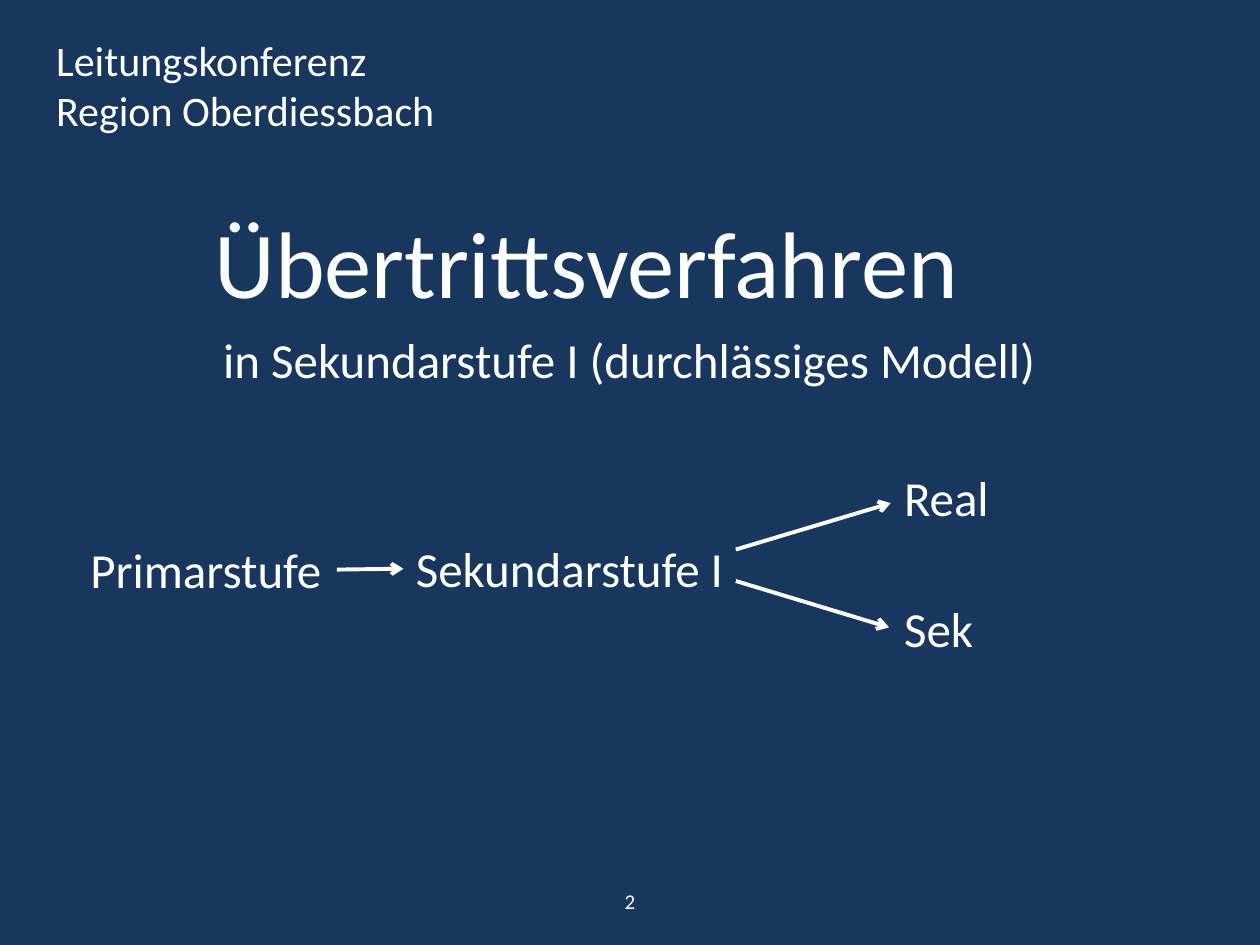
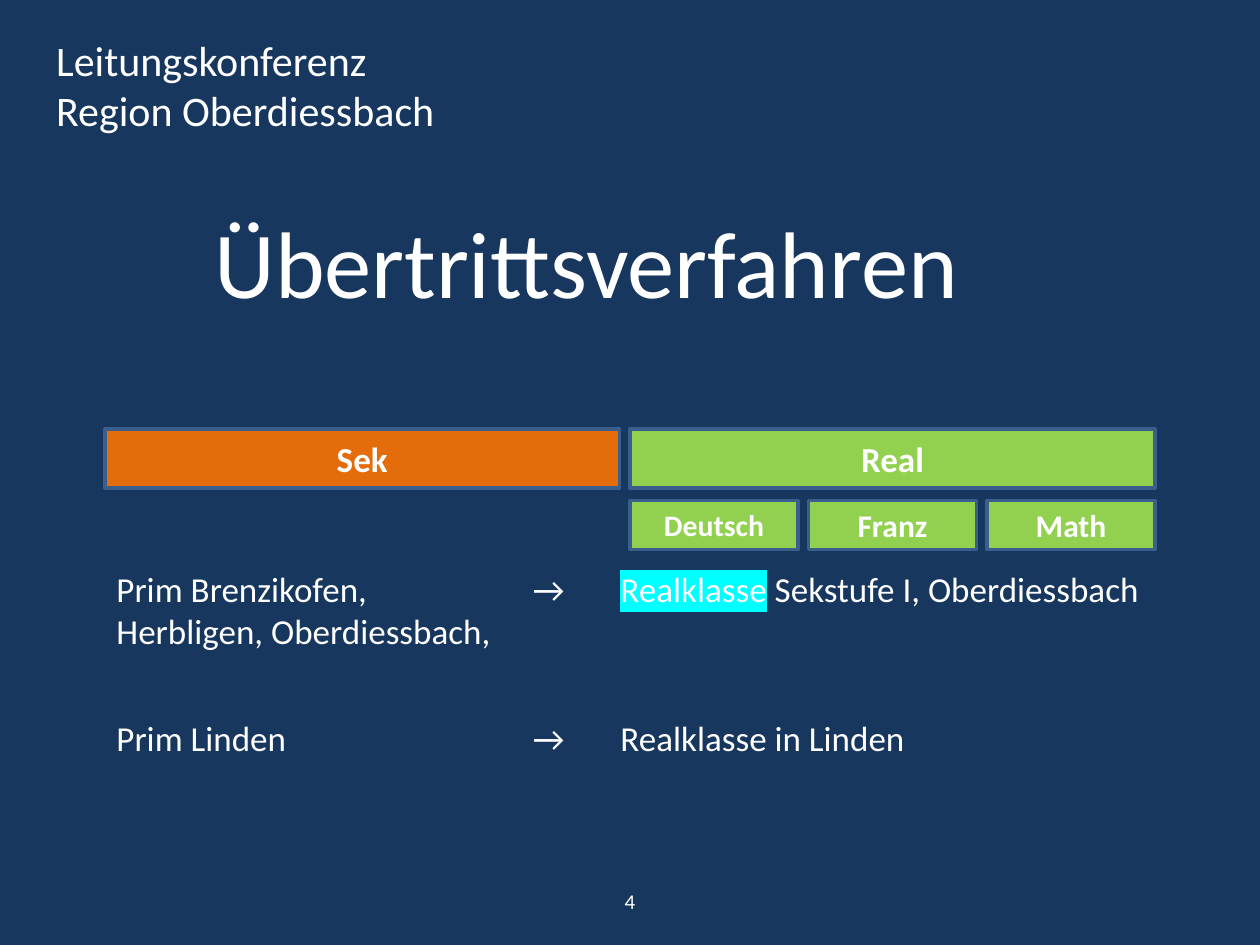
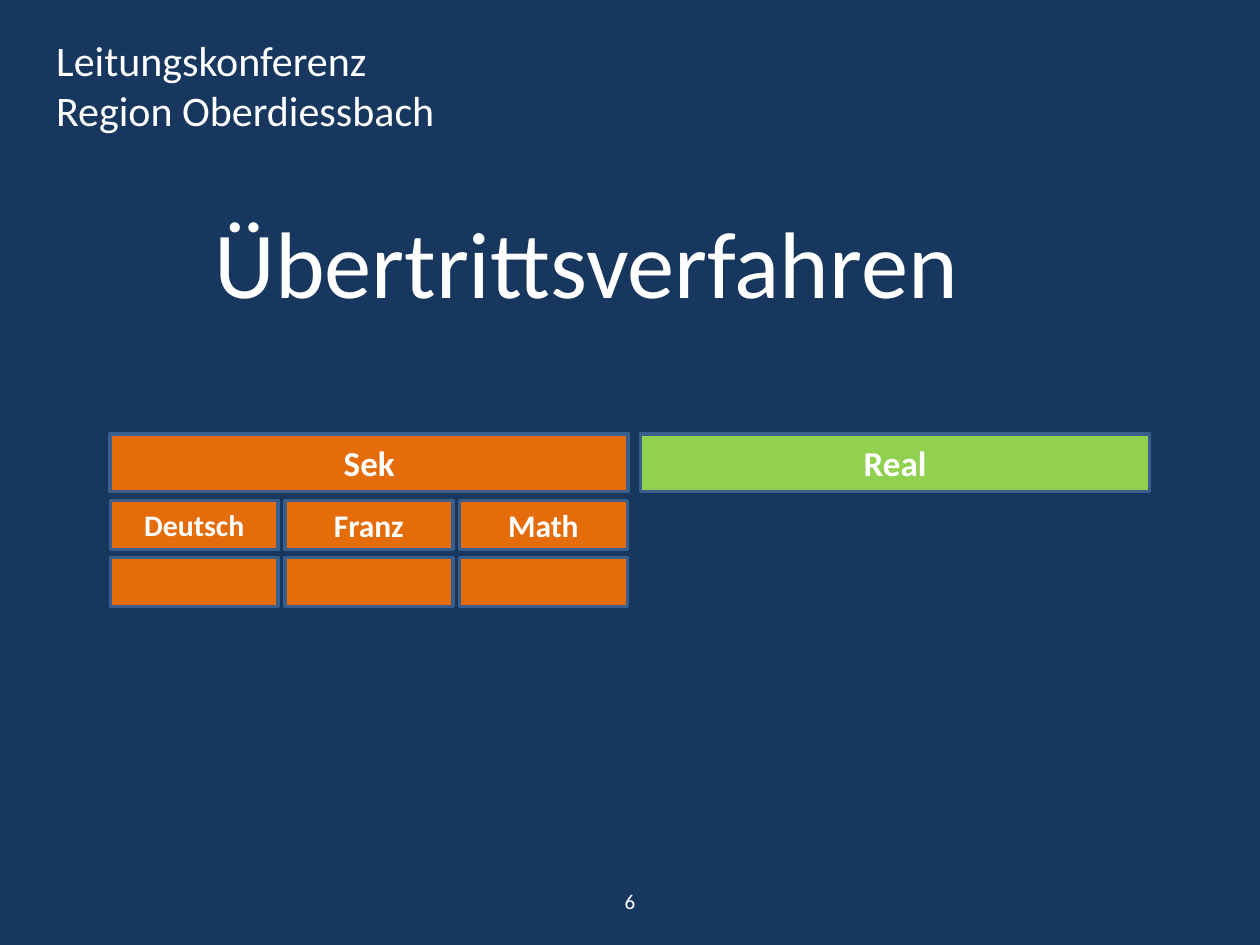
import pptx
import pptx.dml.color
import pptx.enum.shapes
import pptx.enum.text
import pptx.oxml.ns
import pptx.util
import lxml.etree

Pt = pptx.util.Pt
qn = pptx.oxml.ns.qn
NAVY, WHITE, CYAN = "17375E", "FFFFFF", "00FFFF"
EDGE, ORANGE, GREEN = "3A5F8C", "E46C0A", "92D050"
FONT = "Calibri"
NAMES = (("Deutsch", 17), ("Franz", 18), ("Math", 18))
TABS = (238, 288)
LEFT, MID = pptx.enum.text.PP_ALIGN.LEFT, pptx.enum.text.PP_ALIGN.CENTER
TOP, HALF = pptx.enum.text.MSO_ANCHOR.TOP, pptx.enum.text.MSO_ANCHOR.MIDDLE


def hue(code):
    return pptx.dml.color.RGBColor.from_string(code)


def sub(root, tag, **attrs):
    return lxml.etree.SubElement(root, qn(tag), **attrs)


def mark(run):
    node = lxml.etree.Element(qn("a:highlight"))
    sub(node, "a:srgbClr", val=CYAN)
    run.font._element.find(qn("a:solidFill")).addnext(node)


def write(frame, *lines, size=28, bold=False, align=LEFT, anchor=TOP,
          wrap=False, grow=True, tabs=(), glow=None):
    frame.word_wrap = wrap
    frame.vertical_anchor = anchor
    if grow:
        frame.auto_size = pptx.enum.text.MSO_AUTO_SIZE.SHAPE_TO_FIT_TEXT
    for i, line in enumerate(lines):
        para = frame.add_paragraph() if i else frame.paragraphs[0]
        para.alignment = align
        if tabs:
            stops = sub(para._p.get_or_add_pPr(), "a:tabLst")
            for stop in tabs:
                sub(stops, "a:tab", pos=str(int(Pt(stop))), algn="l")
        for part in (line,) if isinstance(line, str) else line:
            if part == "\v":
                para.add_line_break()
                continue
            run = para.add_run()
            run.text = part
            run.font.name, run.font.size = FONT, Pt(size)
            run.font.bold = bold
            run.font.color.rgb = hue(WHITE)
            if part == glow:
                mark(run)


def label(slide, box, *lines, **style):
    shape = slide.shapes.add_textbox(*map(Pt, box))
    write(shape.text_frame, *lines, **style)


def block(slide, box, code, text="", size=20):
    rect = pptx.enum.shapes.MSO_SHAPE.RECTANGLE
    shape = slide.shapes.add_shape(rect, *map(Pt, box))
    shape.shadow.inherit = False
    shape.fill.solid()
    shape.fill.fore_color.rgb = hue(code)
    shape.line.color.rgb = hue(EDGE)
    shape.line.width = Pt(2)
    if text:
        frame = shape.text_frame
        frame.margin_left = frame.margin_right = Pt(3)
        write(frame, text, size=size, bold=True, align=MID, anchor=HALF,
              wrap=True, grow=False)


def arrow(slide, *ends):
    kind = pptx.enum.shapes.MSO_CONNECTOR.STRAIGHT
    line = slide.shapes.add_connector(kind, *map(Pt, ends))
    line.line.color.rgb = hue(WHITE)
    line.line.width = Pt(2.25)
    sub(line.line._get_or_add_ln(), "a:tailEnd", type="arrow")
    sub(line._element.spPr, "a:effectLst")


def base(deck, number):
    slide = deck.slides.add_slide(deck.slide_layouts[6])
    label(slide, (25, 16, 242, 65.5), "Leitungskonferenz",
          "Region Oberdiessbach", size=24)
    label(slide, (115.5, 113, 446, 72.7), "Übertrittsverfahren", size=54)
    label(slide, (246, 500.5, 228, 28.75), str(number), size=12,
          align=MID, anchor=HALF, wrap=True, grow=False)
    return slide


def flow(slide, box):
    x, y = box
    for left, top, wide, text in (
            (0, 41, 148, "Primarstufe"),
            (186, 40.5, 192, "Sekundarstufe I"),
            (465, 0, 63, "Real"),
            (465, 75, 84, "Sek")):
        label(slide, (x + left, y + top, wide, 41), text)
    for left, top, right, low in (
            (148, 62, 186, 61.5),
            (376, 50.5, 464.5, 24),
            (376, 68.5, 463.5, 95)):
        arrow(slide, x + left, y + top, x + right, y + low)


def bars(slide, box, sek, gap):
    x, y, wide, high = box
    block(slide, (x, y, sek, high), ORANGE, "Sek")
    real = x + sek + gap
    block(slide, (real, y, x + wide - real, high), GREEN, "Real")


def grid(slide, box, code, rows=1):
    x, y, wide = box
    cell, high, pitch = 96, 28, 32.5
    step = (wide - cell) / (len(NAMES) - 1)
    for row in range(rows):
        for col, (name, size) in enumerate(NAMES):
            spot = (x + col * step, y + row * pitch, cell, high)
            block(slide, spot, code, "" if row else name, size)


def routes(slide, box):
    x, y, wide, pitch = box
    rows = (("Prim Brenzikofen,\t→\t", "Realklasse",
             " Sekstufe I, Oberdiessbach", "\v", "Herbligen, Oberdiessbach,"),
            ("Prim Linden\t→\tRealklasse in Linden",))
    for i, row in enumerate(rows):
        label(slide, (x, y + i * pitch, wide, 55.5), row, size=20,
              wrap=True, tabs=TABS, glow="Realklasse")


def main():
    deck = pptx.Presentation()
    deck.slide_width, deck.slide_height = Pt(720), Pt(540)
    back = deck.slide_master.background.fill
    back.solid()
    back.fore_color.rgb = hue(NAVY)

    slide = base(deck, 2)
    label(slide, (120.5, 185, 484.5, 41),
          "in Sekundarstufe I (durchlässiges Modell)")
    flow(slide, (44.5, 263.5))

    slide = base(deck, 4)
    bars(slide, (60, 245, 600, 34), 294, 6)
    grid(slide, (360, 286, 300), GREEN)
    routes(slide, (59.5, 321, 629, 85))

    slide = base(deck, 6)
    bars(slide, (63, 248, 594, 33), 296, 7)
    grid(slide, (63, 286, 295.5), ORANGE, rows=2)

    deck.save("out.pptx")


if __name__ == "__main__":
    main()
